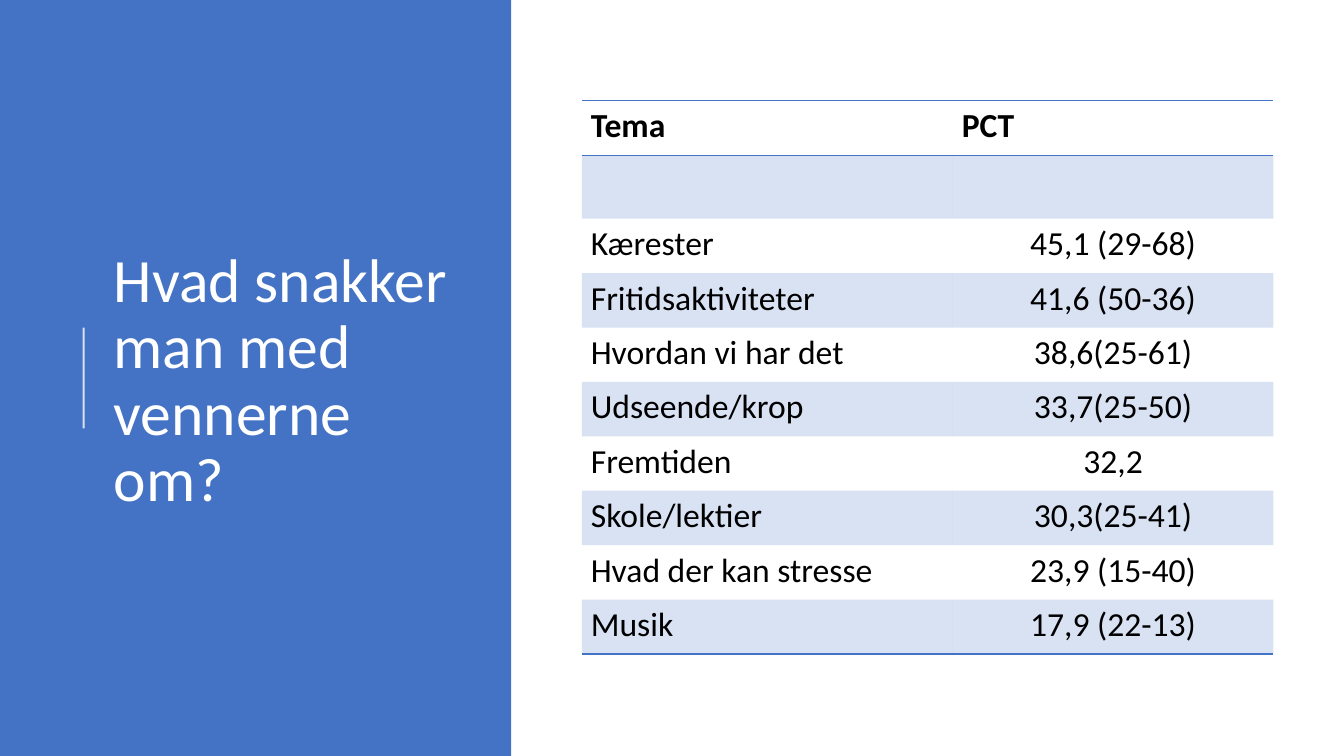
from typing import NamedTuple

from pptx import Presentation
from pptx.dml.color import RGBColor
from pptx.enum.shapes import MSO_CONNECTOR as Connector, MSO_SHAPE as Shape
from pptx.enum.text import MSO_ANCHOR as Anchor, PP_ALIGN as Align
from pptx.oxml import parse_xml
from pptx.oxml.ns import nsdecls, qn
from pptx.oxml.xmlchemy import BaseOxmlElement as Element
from pptx.slide import Slide
from pptx.table import _Cell as Cell
from pptx.text.text import _Paragraph as Paragraph
from pptx.util import Emu, Pt

PX = 9144  # 100 px to the inch
FONT = "Calibri"
COLORS = {"blue": "4472C4", "white": "FFFFFF", "black": "000000"}
PLAIN_STYLE = "{2D5ABB26-0587-4C30-8999-92F81FD0307C}"
ROW_HEIGHT, GAP_HEIGHT = 54, 63
COLUMN_WIDTHS = (368, 318)


class Topic(NamedTuple):
    name: str
    percent: str


HEADER = Topic("Tema", "PCT")
GAP = Topic("", "")
TOPICS = [
    Topic("Kærester", "45,1 (29-68)"),
    Topic("Fritidsaktiviteter", "41,6 (50-36)"),
    Topic("Hvordan vi har det", "38,6(25-61)"),
    Topic("Udseende/krop", "33,7(25-50)"),
    Topic("Fremtiden", "32,2"),
    Topic("Skole/lektier", "30,3(25-41)"),
    Topic("Hvad der kan stresse", "23,9 (15-40)"),
    Topic("Musik", "17,9 (22-13)"),
]


def px(value: int) -> Emu:
    return Emu(value * PX)


def rgb(name: str) -> RGBColor:
    return RGBColor.from_string(COLORS[name])


def set_opacity(element: Element, percent: int) -> None:
    for color in element.iter(qn("a:srgbClr")):
        color.append(parse_xml(f'<a:alpha {nsdecls("a")} val="{percent * 1000}"/>'))


def set_font(paragraph: Paragraph, size: int, color: str, bold: bool = False) -> None:
    font = paragraph.font
    font.name, font.size, font.bold = FONT, Pt(size), bold
    font.color.rgb = rgb(color)


def add_panel(slide: Slide) -> None:
    panel = slide.shapes.add_shape(Shape.RECTANGLE, 0, 0, px(507), px(750))
    panel.shadow.inherit = False
    panel.fill.solid()
    panel.fill.fore_color.rgb = rgb("blue")
    panel.line.fill.background()


def add_title(slide: Slide, text: str) -> None:
    frame = slide.shapes.add_textbox(px(103), px(78), px(369), px(602)).text_frame
    frame.word_wrap = True
    frame.vertical_anchor = Anchor.MIDDLE
    question = frame.paragraphs[0]
    question.text = text
    question.line_spacing = 0.9
    set_font(question, 44, "white")


def add_accent(slide: Slide) -> None:
    accent = slide.shapes.add_connector(
        Connector.STRAIGHT, px(83), px(425), px(83), px(325))
    accent.line.color.rgb = rgb("white")
    accent.line.width = Pt(1.5)
    properties = accent._element.spPr
    set_opacity(properties, 80)
    properties.append(parse_xml(f'<a:effectLst {nsdecls("a")}/>'))


def add_border(cell: Cell, tag: str) -> None:
    cell._tc.get_or_add_tcPr().append(parse_xml(
        f'<a:{tag} {nsdecls("a")} w="{Pt(1)}"><a:solidFill>'
        f'<a:srgbClr val="{COLORS["blue"]}"/></a:solidFill></a:{tag}>'))


def fill_cell(cell: Cell, text: str, row: int, column: int, last_row: int) -> None:
    is_header = row == 0
    entry = cell.text_frame.paragraphs[0]
    entry.text = text
    entry.alignment = Align.CENTER if column and not is_header else Align.LEFT
    set_font(entry, 24, "black", bold=is_header)
    cell.margin_left = cell.margin_right = px(9)
    cell.margin_top = cell.margin_bottom = px(5)
    # Borders come before the fill in the cell properties
    if is_header:
        add_border(cell, "lnT")
    if row in (0, last_row):
        add_border(cell, "lnB")
    if row % 2:
        cell.fill.solid()
        cell.fill.fore_color.rgb = rgb("blue")
        set_opacity(cell._tc.tcPr.find(qn("a:solidFill")), 20)
    else:
        cell.fill.background()


def add_topic_table(slide: Slide) -> None:
    entries = [HEADER, GAP, *TOPICS]
    heights = [GAP_HEIGHT if entry == GAP else ROW_HEIGHT for entry in entries]
    frame = slide.shapes.add_table(
        len(entries), len(COLUMN_WIDTHS), px(577), px(100),
        px(sum(COLUMN_WIDTHS)), px(sum(heights)))
    table = frame.table
    table._tbl.tblPr.find(qn("a:tableStyleId")).text = PLAIN_STYLE
    table.horz_banding = False
    for column, width in zip(table.columns, COLUMN_WIDTHS):
        column.width = px(width)
    for r, (entry, height) in enumerate(zip(entries, heights)):
        table.rows[r].height = px(height)
        for c, text in enumerate(entry):
            fill_cell(table.cell(r, c), text, r, c, len(entries) - 1)


def main() -> None:
    deck = Presentation()
    deck.slide_width, deck.slide_height = px(1333), px(750)
    slide = deck.slides.add_slide(deck.slide_layouts[6])
    # Left: question on a blue panel
    add_panel(slide)
    add_title(slide, "Hvad snakker man med vennerne om?")
    add_accent(slide)
    # Right: topics and their share
    add_topic_table(slide)
    deck.save("out.pptx")


if __name__ == "__main__":
    main()
